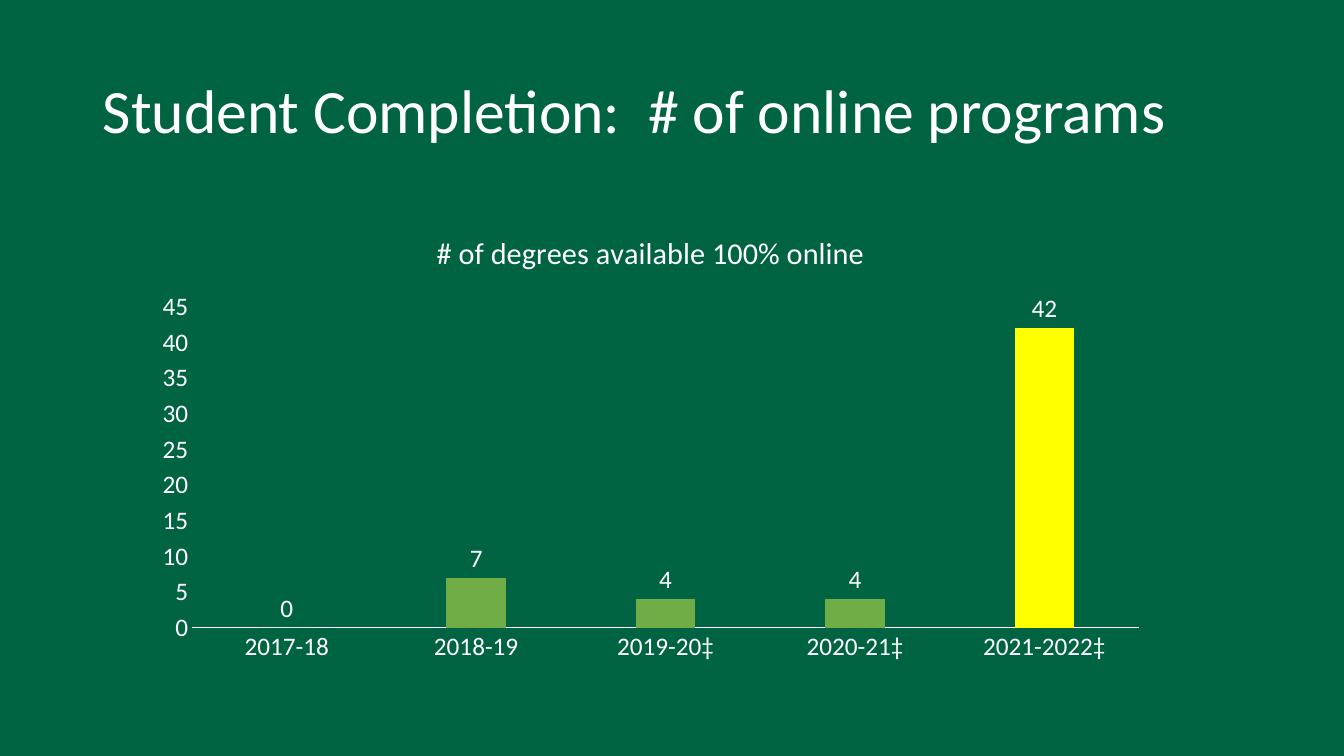
from dataclasses import dataclass

from pptx import Presentation
from pptx import util as u
from pptx.chart.data import CategoryChartData
from pptx.dml.color import RGBColor
from pptx.enum import chart as ch
from pptx.enum import text

WIDTH, HEIGHT = 13.33, 7.5
FONT = "Calibri"
GREEN, WHITE, LIME, YELLOW = "006342", "FFFFFF", "70AD47", "FFFF00"
CHART_TITLE = "# of degrees available 100% online"


@dataclass(frozen=True)
class Area:
    """A rectangle in inches."""
    left: float
    top: float
    width: float
    height: float

    def lengths(self) -> tuple:
        return tuple(u.Inches(n) for n in (self.left, self.top, self.width, self.height))


@dataclass(frozen=True)
class Year:
    label: str
    degrees: int
    color: str = LIME


TITLE_AREA = Area(0.92, 0.4, 11.5, 1.45)
CHART_AREA = Area(1.41, 2.1, 10.09, 4.56)
YEARS = [
    Year("2017-18", 0),
    Year("2018-19", 7),
    Year("2019-20‡", 4),
    Year("2020-21‡", 4),
    Year("2021-2022‡", 42, YELLOW),
]


def paint(color_format, color: str) -> None:
    color_format.rgb = RGBColor.from_string(color)


def style_font(font, size: float) -> None:
    font.name = FONT
    font.size = u.Pt(size)
    font.bold = False
    paint(font.color, WHITE)


def add_title(page, wording: str) -> None:
    box = page.shapes.title
    box.left, box.top, box.width, box.height = TITLE_AREA.lengths()
    frame = box.text_frame
    frame.text = wording
    frame.word_wrap = True
    frame.vertical_anchor = text.MSO_ANCHOR.MIDDLE
    para = frame.paragraphs[0]
    para.alignment = text.PP_ALIGN.LEFT
    para.line_spacing = 0.9
    style_font(para.runs[0].font, 44)


def style_axis(axis) -> None:
    axis.has_major_gridlines = False
    axis.major_tick_mark = axis.minor_tick_mark = ch.XL_TICK_MARK.NONE
    style_font(axis.tick_labels.font, 18)


def add_degree_chart(page) -> None:
    data = CategoryChartData()
    data.categories = [year.label for year in YEARS]
    data.add_series(CHART_TITLE, [year.degrees for year in YEARS])
    chart = page.shapes.add_chart(
        ch.XL_CHART_TYPE.COLUMN_CLUSTERED, *CHART_AREA.lengths(), data).chart
    style_font(chart.font, 18)
    chart.has_legend = False

    # Chart title
    chart.has_title = True
    frame = chart.chart_title.text_frame
    frame.text = CHART_TITLE
    style_font(frame.paragraphs[0].runs[0].font, 21.6)
    chart.chart_title.include_in_layout = False

    # Axes
    for axis in (chart.category_axis, chart.value_axis):
        style_axis(axis)
    baseline = chart.category_axis.format.line
    baseline.width = u.Pt(0.75)
    paint(baseline.color, WHITE)
    scale = chart.value_axis
    scale.format.line.fill.background()
    scale.minimum_scale, scale.maximum_scale, scale.major_unit = 0, 45, 5

    # Columns and their labels
    plot = chart.plots[0]
    plot.gap_width, plot.overlap = 219, -27
    plot.vary_by_categories = False
    series = plot.series[0]
    series.invert_if_negative = False
    series.format.fill.solid()
    paint(series.format.fill.fore_color, LIME)
    for index, year in enumerate(YEARS):
        if year.color != LIME:
            fill = series.points[index].format.fill
            fill.solid()
            paint(fill.fore_color, year.color)
    labels = series.data_labels
    labels.show_value = True
    labels.position = ch.XL_LABEL_POSITION.OUTSIDE_END
    style_font(labels.font, 18)


def main() -> None:
    deck = Presentation()
    deck.slide_width, deck.slide_height = u.Inches(WIDTH), u.Inches(HEIGHT)
    page = deck.slides.add_slide(deck.slide_layouts.get_by_name("Title Only"))
    page.background.fill.solid()
    paint(page.background.fill.fore_color, GREEN)
    add_title(page, "Student Completion:  # of online programs")
    add_degree_chart(page)
    deck.save("out.pptx")


if __name__ == "__main__":
    main()
